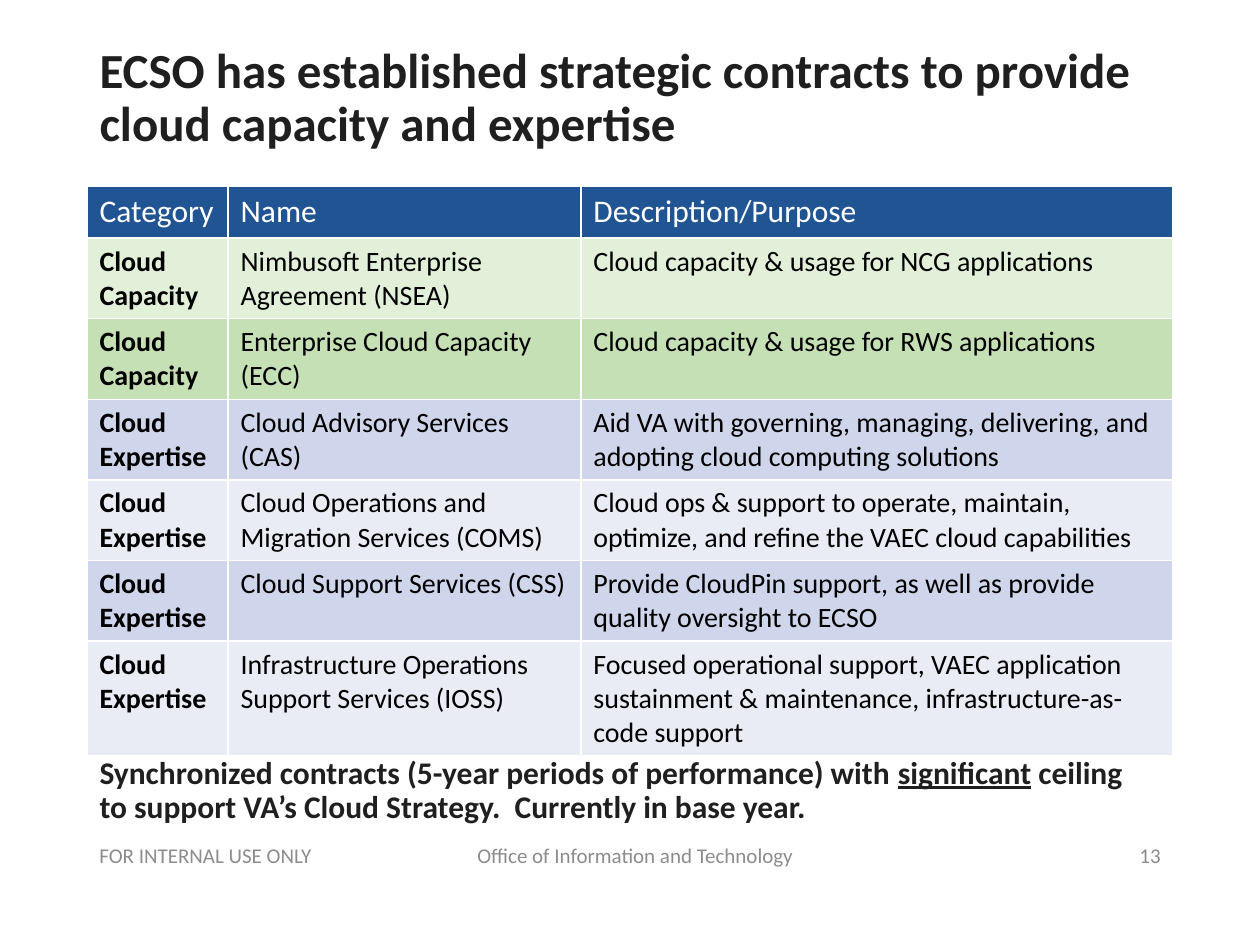
"""Build the slide on strategic cloud contracts."""
import pptx
import pptx.dml.color
import pptx.enum.text
import pptx.oxml
import pptx.oxml.ns
import pptx.util

Inches = pptx.util.Inches
Pt = pptx.util.Pt
Align = pptx.enum.text.PP_ALIGN
Anchor = pptx.enum.text.MSO_ANCHOR
LEFT, WIDE = 0.69, 8.62
DARK, GRAY, BLUE, WHITE, BLACK = "1F1F1F", "8C8C8C", "205493", "FFFFFF", "000000"
PALE, GREEN, LILAC, MIST = "E2F0D9", "C5E0B4", "CFD5EA", "E9EBF5"
HEADS = ["Category", "Name", "Description/Purpose"]
ROWS = [
    (PALE, "Cloud Capacity", "Nimbusoft Enterprise Agreement (NSEA)",
     "Cloud capacity & usage for NCG applications"),
    (GREEN, "Cloud Capacity", "Enterprise Cloud Capacity (ECC)",
     "Cloud capacity & usage for RWS applications"),
    (LILAC, "Cloud Expertise", "Cloud Advisory Services (CAS)",
     "Aid VA with governing, managing, delivering, and adopting cloud computing solutions"),
    (MIST, "Cloud Expertise", "Cloud Operations and Migration Services (COMS)",
     "Cloud ops & support to operate, maintain, optimize, and refine the VAEC cloud capabilities"),
    (LILAC, "Cloud Expertise", "Cloud Support Services (CSS)",
     "Provide CloudPin support, as well as provide quality oversight to ECSO"),
    (MIST, "Cloud Expertise", "Infrastructure Operations Support Services (IOSS)",
     "Focused operational support, VAEC application sustainment & maintenance, "
     "infrastructure-as-code support"),
]


def color(code):
    return pptx.dml.color.RGBColor.from_string(code)


def node(text):
    return pptx.oxml.parse_xml(text.replace(" ", f" {pptx.oxml.ns.nsdecls('a')} ", 1))


class Deck:
    def __init__(self, slide, face="Calibri"):
        self.slide = slide
        self.face = face

    def style(self, para, size, code, bold=False):
        font = para.font
        font.name, font.size, font.bold = self.face, Pt(size), bold
        font.color.rgb = color(code)

    def place(self, shape, top, high, anchor):
        shape.left, shape.top = Inches(LEFT), Inches(top)
        shape.width, shape.height = Inches(WIDE), Inches(high)
        frame = shape.text_frame
        frame.auto_size = pptx.enum.text.MSO_AUTO_SIZE.NONE
        frame.word_wrap, frame.vertical_anchor = True, anchor
        para = frame.paragraphs[0]
        para.alignment, para.line_spacing = Align.LEFT, 0.9
        para.space_before = Pt(0)
        return para

    def title(self, text):
        para = self.place(self.slide.shapes.title, 0.41, 0.75, Anchor.MIDDLE)
        para.add_run().text = text
        self.style(para, 28, DARK, True)

    def body(self, start, key, mid, end):
        para = self.place(self.slide.placeholders[1], 5.96, 0.5, Anchor.TOP)
        props = para._p.get_or_add_pPr()
        props.set("marL", "0")
        props.set("indent", "0")
        props.append(node("<a:buNone />"))
        para.add_run().text = start
        run = para.add_run()
        run.text, run.font.underline = key, True
        para.add_run().text = mid
        para.add_line_break()
        para.add_run().text = end
        self.style(para, 18, DARK, True)

    def note(self, text, left, width, align=Align.LEFT, stops=()):
        box = self.slide.shapes.add_textbox(
            Inches(left), Inches(6.59), Inches(width), Inches(0.4))
        frame = box.text_frame
        frame.word_wrap, frame.vertical_anchor = True, Anchor.MIDDLE
        para = frame.paragraphs[0]
        para.text, para.alignment = text, align
        if stops:
            tabs = "".join(f'<a:tab pos="{Inches(stop)}" algn="l"/>' for stop in stops)
            para._p.get_or_add_pPr().append(node(f"<a:tabLst >{tabs}</a:tabLst>"))
        self.style(para, 12, GRAY)

    def cell(self, cell, text, fill, size, code, bold):
        props = cell._tc.get_or_add_tcPr()
        for side in "LRTB":
            props.append(node(
                f'<a:ln{side} w="{Pt(1)}"><a:solidFill><a:srgbClr val="{WHITE}"/>'
                f"</a:solidFill></a:ln{side}>"))
        cell.fill.solid()
        cell.fill.fore_color.rgb = color(fill)
        cell.text = text
        self.style(cell.text_frame.paragraphs[0], size, code, bold)

    def table(self, heads, rows, widths, highs):
        grid = self.slide.shapes.add_table(
            len(highs), len(widths), Inches(LEFT), Inches(1.48),
            Inches(WIDE), Inches(sum(highs))).table
        for col, width in zip(grid.columns, widths):
            col.width = Inches(width)
        for row, high in zip(grid.rows, highs):
            row.height = Inches(high)
        for c, text in enumerate(heads):
            self.cell(grid.cell(0, c), text, BLUE, 18, WHITE, False)
        for r, (fill, *texts) in enumerate(rows, 1):
            for c, text in enumerate(texts):
                self.cell(grid.cell(r, c), text, fill, 16, BLACK, c == 0)


def main():
    show = pptx.Presentation()
    show.slide_width, show.slide_height = Inches(10), Inches(7.5)
    deck = Deck(show.slides.add_slide(show.slide_layouts[1]))
    deck.title("ECSO has established strategic contracts to provide cloud capacity and expertise")
    deck.body("Synchronized contracts (5-year periods of performance) with ", "significant",
              " ceiling ", "to support VA’s Cloud Strategy.  Currently in base year.")
    deck.note("13", 7.06, 2.25, Align.RIGHT)
    deck.note("FOR INTERNAL USE ONLY\t\tOffice of Information and Technology",
              LEFT, 6.18, stops=(2, 3))
    deck.table(HEADS, ROWS, [1.12, 2.8, 4.7], [0.41] + [0.64] * 5 + [0.91])
    show.save("out.pptx")


if __name__ == "__main__":
    main()
